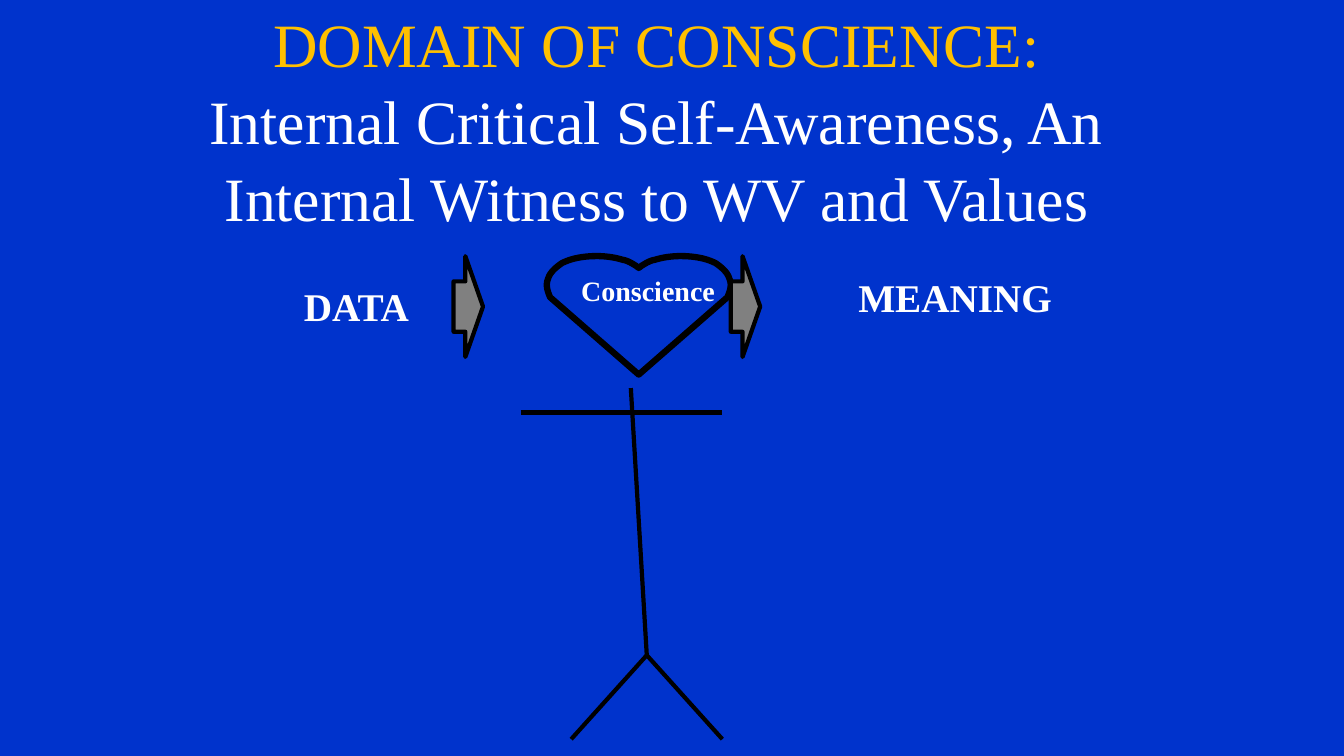
from dataclasses import dataclass

from lxml import etree
from pptx import Presentation
from pptx.dml.color import RGBColor
from pptx.enum.shapes import MSO_CONNECTOR as Connector, MSO_SHAPE as Preset
from pptx.enum.text import MSO_ANCHOR as Anchor, PP_ALIGN as Align
from pptx.oxml.ns import qn
from pptx.shapes.shapetree import GroupShapes, SlideShapes
from pptx.text.text import _Paragraph as Paragraph
from pptx.util import Emu, Inches, Pt

FONT = "Times New Roman"
COLOURS = {"blue": "0033CC", "gold": "FFC000", "white": "FFFFFF",
           "black": "000000", "grey": "808080"}
Point = tuple[float, float]


@dataclass
class Label:
    text: str
    col: float
    row: float
    cols: float
    rows: float
    size: int
    wrap: bool


@dataclass
class Limb:
    start: Point
    end: Point


# The slide is a grid of 160 columns by 90 rows, twelve to the inch
LABELS = [
    Label("DATA", 35, 33, 15.6, 6.8, 28, False),
    Label("MEANING", 101, 32, 25.4, 6.8, 28, False),
    Label("Conscience", 68, 32, 19, 5.3, 20, True),
]
HIP = (77, 78)
LIMBS = [
    Limb((75.1, 46.2), HIP),
    Limb(HIP, (68, 88)),
    Limb(HIP, (86, 88)),
    Limb((62, 49.1), (86, 49.1)),
]
ARROW_COLS = (54, 87)

# Left half of the heart: offsets from its axis, with Bezier controls
HEART_AXIS = 76.05
HEART_NOTCH = (0, 31.9)
HEART_TIP = (0, 44.6)
HEART_CURVES = [
    ((-0.36, 31.6), (-1.32, 31), (-1.85, 30.95)),
    ((-3, 30.6), (-4.2, 30.45), (-5.5, 30.5)),
    ((-6.85, 30.55), (-8.05, 30.8), (-9.1, 31.3)),
    ((-10, 31.9), (-10.6, 32.5), (-10.8, 33.2)),
    ((-11.15, 34), (-10.8, 34.8), (-10.55, 35.4)),
]
CURVE_STEPS = 10


def grid(*cells: float) -> list[Emu]:
    return [Inches(cell / 12) for cell in cells]


def colour(name: str) -> RGBColor:
    return RGBColor.from_string(COLOURS[name])


def format_text(paragraph: Paragraph, size: int, shade: str, bold: bool) -> None:
    for run in paragraph.runs:
        run.font.name = FONT
        run.font.size = Pt(size)
        run.font.bold = bold
        run.font.color.rgb = colour(shade)


def add_title(shapes: SlideShapes) -> None:
    frame = shapes.add_textbox(*grid(20, 0, 120, 27)).text_frame
    frame.word_wrap = True
    frame.vertical_anchor = Anchor.MIDDLE
    frame.margin_top = Inches(0.15)
    frame.text = ("DOMAIN OF CONSCIENCE:\n"
                  "Internal Critical Self-Awareness, An Internal Witness to WV and Values")
    for paragraph, shade in zip(frame.paragraphs, ("gold", "white")):
        paragraph.alignment = Align.CENTER
        paragraph.line_spacing = 1.04
        format_text(paragraph, 44, shade, False)
    # A right indent sets the heading slightly left of centre
    heading = frame.paragraphs[0]
    heading._p.get_or_add_pPr().set("marR", str(Inches(0.3)))


def add_label(shapes: SlideShapes, label: Label) -> None:
    frame = shapes.add_textbox(
        *grid(label.col, label.row, label.cols, label.rows)).text_frame
    frame.word_wrap = label.wrap
    frame.text = label.text
    format_text(frame.paragraphs[0], label.size, "white", True)


def heart_half() -> list[Point]:
    points = [HEART_NOTCH]
    for first, second, end in HEART_CURVES:
        start = points[-1]
        for step in range(1, CURVE_STEPS + 1):
            t = step / CURVE_STEPS
            weights = ((1 - t) ** 3, 3 * t * (1 - t) ** 2, 3 * t ** 2 * (1 - t), t ** 3)
            corners = (start, first, second, end)
            points.append((sum(w * x for w, (x, _) in zip(weights, corners)),
                           sum(w * y for w, (_, y) in zip(weights, corners))))
    return points


def add_heart(shapes: GroupShapes) -> None:
    left = heart_half()
    right = [(-x, y) for x, y in reversed(left[1:])]
    outline = [grid(HEART_AXIS + x, y) for x, y in left + [HEART_TIP] + right]
    builder = shapes.build_freeform(*outline[0])
    builder.add_line_segments(outline[1:], close=True)
    heart = builder.convert_to_shape()
    heart.shadow.inherit = False
    heart.fill.background()
    heart.line.color.rgb = colour("black")
    heart.line.width = Pt(4.5)


def add_limb(shapes: GroupShapes, limb: Limb) -> None:
    line = shapes.add_connector(Connector.STRAIGHT, *grid(*limb.start, *limb.end))
    line.line.color.rgb = colour("black")
    line.line.width = Pt(3)
    etree.SubElement(line._element.spPr, qn("a:effectLst"))


def add_arrow(shapes: GroupShapes, col: float) -> None:
    arrow = shapes.add_shape(Preset.RIGHT_ARROW, *grid(col, 30.5, 3.5, 12))
    arrow.adjustments[0] = 0.5
    arrow.adjustments[1] = 0.6
    arrow.shadow.inherit = False
    arrow.fill.solid()
    arrow.fill.fore_color.rgb = colour("grey")
    arrow.line.color.rgb = colour("black")
    arrow.line.width = Pt(3)


def main() -> None:
    deck = Presentation()
    deck.slide_width, deck.slide_height = grid(160, 90)
    slide = deck.slides.add_slide(deck.slide_layouts[6])
    slide.background.fill.solid()
    slide.background.fill.fore_color.rgb = colour("blue")

    add_title(slide.shapes)

    # Stick figure with a heart for a head, between two arrows
    figure = slide.shapes.add_group_shape().shapes
    add_heart(figure)
    for limb in LIMBS:
        add_limb(figure, limb)
    for col in ARROW_COLS:
        add_arrow(figure, col)

    # Words on the way from data to meaning
    for label in LABELS:
        add_label(slide.shapes, label)

    deck.save("out.pptx")


if __name__ == "__main__":
    main()
